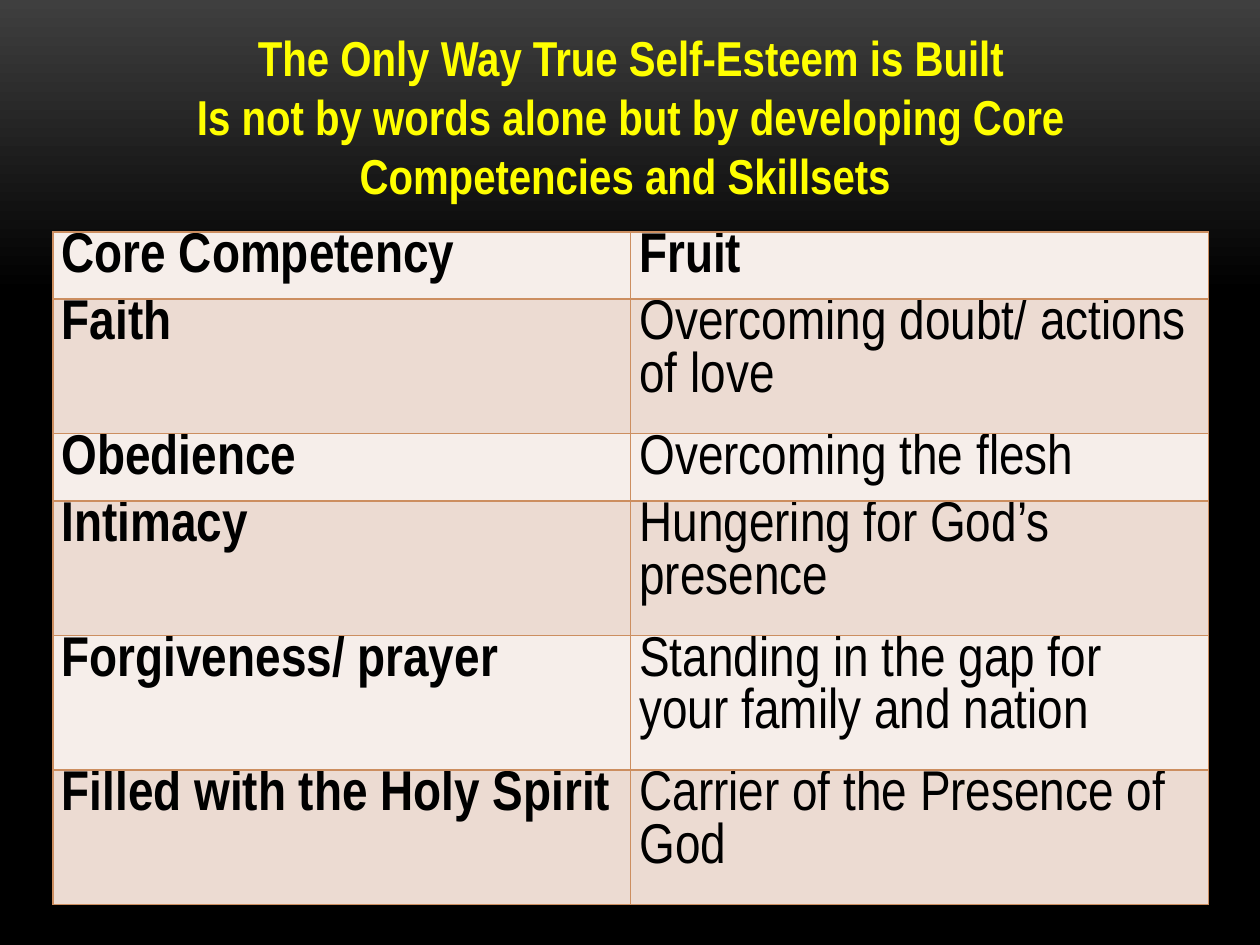
from dataclasses import dataclass

from lxml import etree
from pptx import Presentation
from pptx.dml.color import RGBColor
from pptx.enum import text
from pptx.oxml import ns
from pptx.util import Inches, Pt


@dataclass(frozen=True)
class Theme:
    font: str = "Arial Narrow"
    title_size: int = 28
    table_size: int = 32
    title: str = "FFFF00"
    body: str = "000000"
    bg_top: str = "3F3F3F"
    bg_bottom: str = "000000"
    border: str = "CC8E60"
    bands: tuple[str, str] = ("F6EEEA", "ECDBD2")


@dataclass(frozen=True)
class Row:
    competency: str
    fruit: str
    lines: int = 2
    header: bool = False


THEME = Theme()
LEFT, WIDTH = 0.42, 9.17
LINE_HEIGHT = 5.33 / 10
TITLE = (
    "The Only Way True Self-Esteem is Built",
    "Is not by words alone but by developing Core Competencies and Skillsets ",
)
ROWS = (
    Row("Core Competency", "Fruit", lines=1, header=True),
    Row("Faith", "Overcoming doubt/ actions of love"),
    Row("Obedience", "Overcoming the flesh", lines=1),
    Row("Intimacy", "Hungering for God’s presence"),
    Row("Forgiveness/ prayer", "Standing in the gap for your family and nation"),
    Row("Filled with the Holy Spirit", "Carrier of the Presence of God"),
)


def set_font(p, size: int, color: str, bold: bool) -> None:
    p.font.name = THEME.font
    p.font.size = Pt(size)
    p.font.bold = bold
    p.font.color.rgb = RGBColor.from_string(color)


def paint_background(slide) -> None:
    fill = slide.background.fill
    fill.gradient()
    fill.gradient_angle = 270
    stops = ((0, THEME.bg_top), (0.31, THEME.bg_bottom))
    for stop, (position, color) in zip(fill.gradient_stops, stops):
        stop.position = position
        stop.color.rgb = RGBColor.from_string(color)


def add_title(slide) -> None:
    sp = slide.shapes.add_textbox(Inches(LEFT), Inches(0.17), Inches(WIDTH), Inches(1.51))
    tf = sp.text_frame
    tf.word_wrap = True
    tf.text = "\n".join(TITLE)
    for p in tf.paragraphs:
        p.alignment = text.PP_ALIGN.CENTER
        set_font(p, THEME.title_size, THEME.title, True)


def add_borders(cell) -> None:
    tc_pr = cell._tc.get_or_add_tcPr()
    for side in ("a:lnL", "a:lnR", "a:lnT", "a:lnB"):
        ln = etree.SubElement(tc_pr, ns.qn(side), w=str(Pt(1)))
        fill = etree.SubElement(ln, ns.qn("a:solidFill"))
        etree.SubElement(fill, ns.qn("a:srgbClr"), val=THEME.border)


def fill_cell(cell, words: str, band: str, bold: bool) -> None:
    cell.margin_left = cell.margin_right = Inches(0.07)
    cell.margin_top = cell.margin_bottom = 0
    add_borders(cell)
    cell.fill.solid()
    cell.fill.fore_color.rgb = RGBColor.from_string(band)
    cell.text = words
    set_font(cell.text_frame.paragraphs[0], THEME.table_size, THEME.body, bold)


def add_competency_table(slide) -> None:
    height = LINE_HEIGHT * sum(row.lines for row in ROWS)
    table = slide.shapes.add_table(
        len(ROWS), 2, Inches(LEFT), Inches(1.84), Inches(WIDTH), Inches(height)
    ).table
    for i, row in enumerate(ROWS):
        table.rows[i].height = Inches(LINE_HEIGHT * row.lines)
        band = THEME.bands[i % 2]
        fill_cell(table.cell(i, 0), row.competency, band, True)
        fill_cell(table.cell(i, 1), row.fruit, band, row.header)


def main() -> None:
    prs = Presentation()
    prs.slide_width, prs.slide_height = Inches(10), Inches(7.5)
    slide = prs.slides.add_slide(prs.slide_layouts[6])
    paint_background(slide)
    add_title(slide)
    add_competency_table(slide)
    prs.save("out.pptx")


if __name__ == "__main__":
    main()
